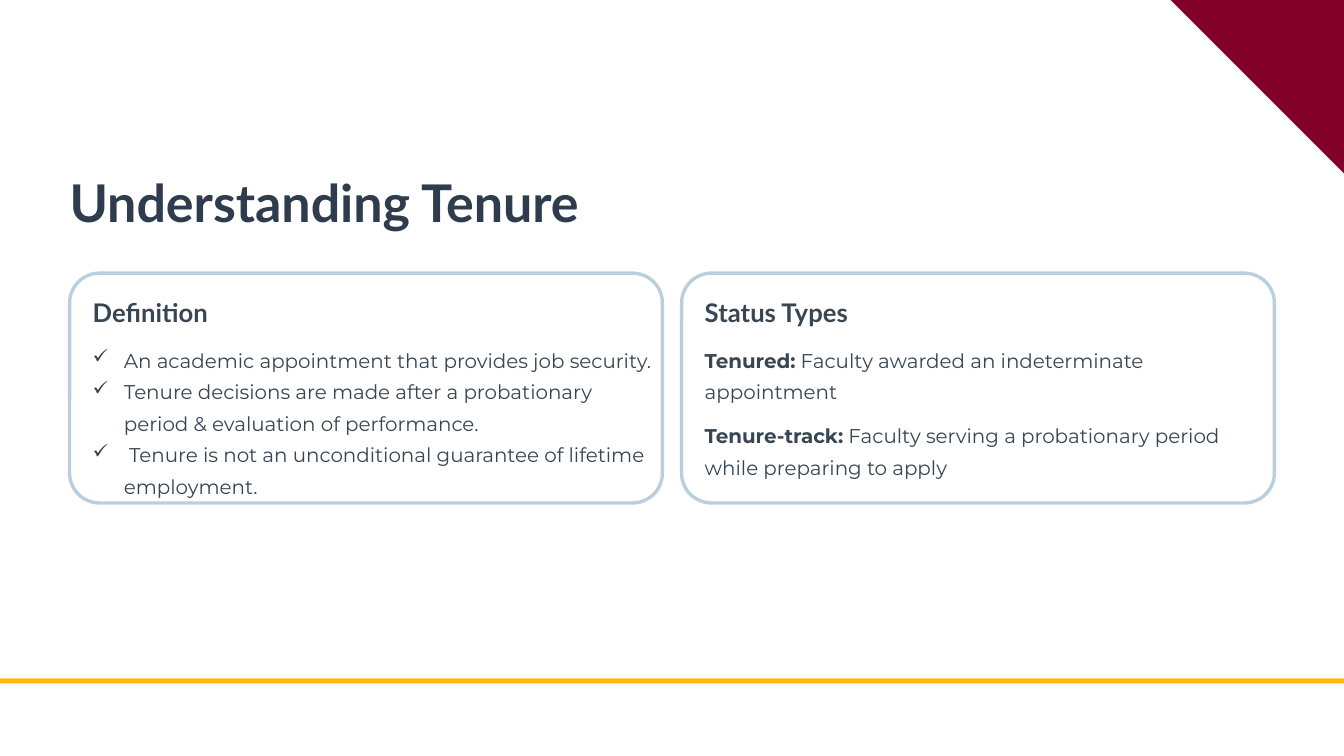
from lxml.etree import SubElement
from pptx import Presentation
from pptx.dml.color import RGBColor
from pptx.enum.shapes import MSO_SHAPE as SHAPE
from pptx.oxml.ns import qn
from pptx.util import Inches, Pt

TITLE = "Understanding Tenure"
CARDS = [
    {"heading": "Definition", "bullet": "✓", "width": 5.57, "height": 1.52, "blocks": [[
        [("An academic appointment that provides job security.", False)],
        [("Tenure decisions are made after a probationary period & evaluation of performance.", False)],
        [(" Tenure is not an unconditional guarantee of lifetime employment.", False)],
    ]]},
    {"heading": "Status Types", "bullet": None, "width": 5.43, "height": 0.63, "blocks": [
        [[("Tenured:", True), (" Faculty awarded an indeterminate appointment", False)]],
        [[("Tenure-track:", True),
          (" Faculty serving a probationary period while preparing to apply", False)]],
    ]},
]
COLORS = {"maroon": "830028", "gold": "FDB913", "title": "2E3C4E",
          "text": "384653", "border": "BACFDD", "white": "FFFFFF"}
WIDTH, HEIGHT = 13.33, 7.5
MARGIN, INSET = 0.69, 0.23
CARD_TOP, CARD_W, CARD_H, CARD_STEP = 2.71, 5.88, 2.28, 6.07
HEADING_TOP, BODY_TOP, BLOCK_STEP = 2.93, 3.38, 0.75
CORNER, INDENT = 1.72, 0.31

prs = Presentation()
prs.slide_width, prs.slide_height = Inches(WIDTH), Inches(HEIGHT)
s = prs.slides.add_slide(prs.slide_layouts[6])


def rgb(name):
    return RGBColor.from_string(COLORS[name])


def add_shape(kind, box, fill, border=None):
    sp = s.shapes.add_shape(kind, *map(Inches, box))
    sp.shadow.inherit = False
    sp.fill.solid()
    sp.fill.fore_color.rgb = rgb(fill)
    if border:
        sp.line.color.rgb = rgb(border)
        sp.line.width = Pt(2.4)
    else:
        sp.line.fill.background()
    return sp


def add_text(paragraphs, box, size, leading, font="Lato", color="text", wrap=False, bullet=None):
    tf = s.shapes.add_textbox(*map(Inches, box)).text_frame
    tf.margin_left = tf.margin_top = tf.margin_right = tf.margin_bottom = 0
    tf.word_wrap = wrap
    for i, runs in enumerate(paragraphs):
        p = tf.add_paragraph() if i else tf.paragraphs[0]
        p.line_spacing = Pt(leading)
        if bullet:
            pPr = p._p.get_or_add_pPr()
            pPr.set("marL", str(Inches(INDENT)))
            pPr.set("indent", str(-Inches(INDENT)))
            SubElement(pPr, qn("a:buChar")).set("char", bullet)
        for text, bold in runs:
            r = p.add_run()
            r.text = text
            r.font.name, r.font.size, r.font.bold = font, Pt(size), bold
            r.font.color.rgb = rgb(color)


corner = add_shape(SHAPE.RIGHT_TRIANGLE, (WIDTH - CORNER, 0, CORNER, CORNER), "maroon")
corner.rotation = 180
add_shape(SHAPE.RECTANGLE, (0, 6.73, WIDTH, 0.05), "gold")
add_text([[(TITLE, True)]], (MARGIN, 1.66, 5.2, 0.65), 37.1, 46.7, color="title")

for i, card in enumerate(CARDS):
    left = MARGIN + i * CARD_STEP
    panel = add_shape(SHAPE.ROUNDED_RECTANGLE, (left, CARD_TOP, CARD_W, CARD_H), "white", "border")
    panel.adjustments[0] = 0.13
    add_text([[(card["heading"], True)]], (left + INSET, HEADING_TOP, 2.6, 0.32), 18.3, 23.3)
    for j, block in enumerate(card["blocks"]):
        box = (left + INSET, BODY_TOP + j * BLOCK_STEP, card["width"], card["height"])
        add_text(block, box, 14.2, 22.5, font="Montserrat", wrap=True, bullet=card["bullet"])

prs.save("out.pptx")
